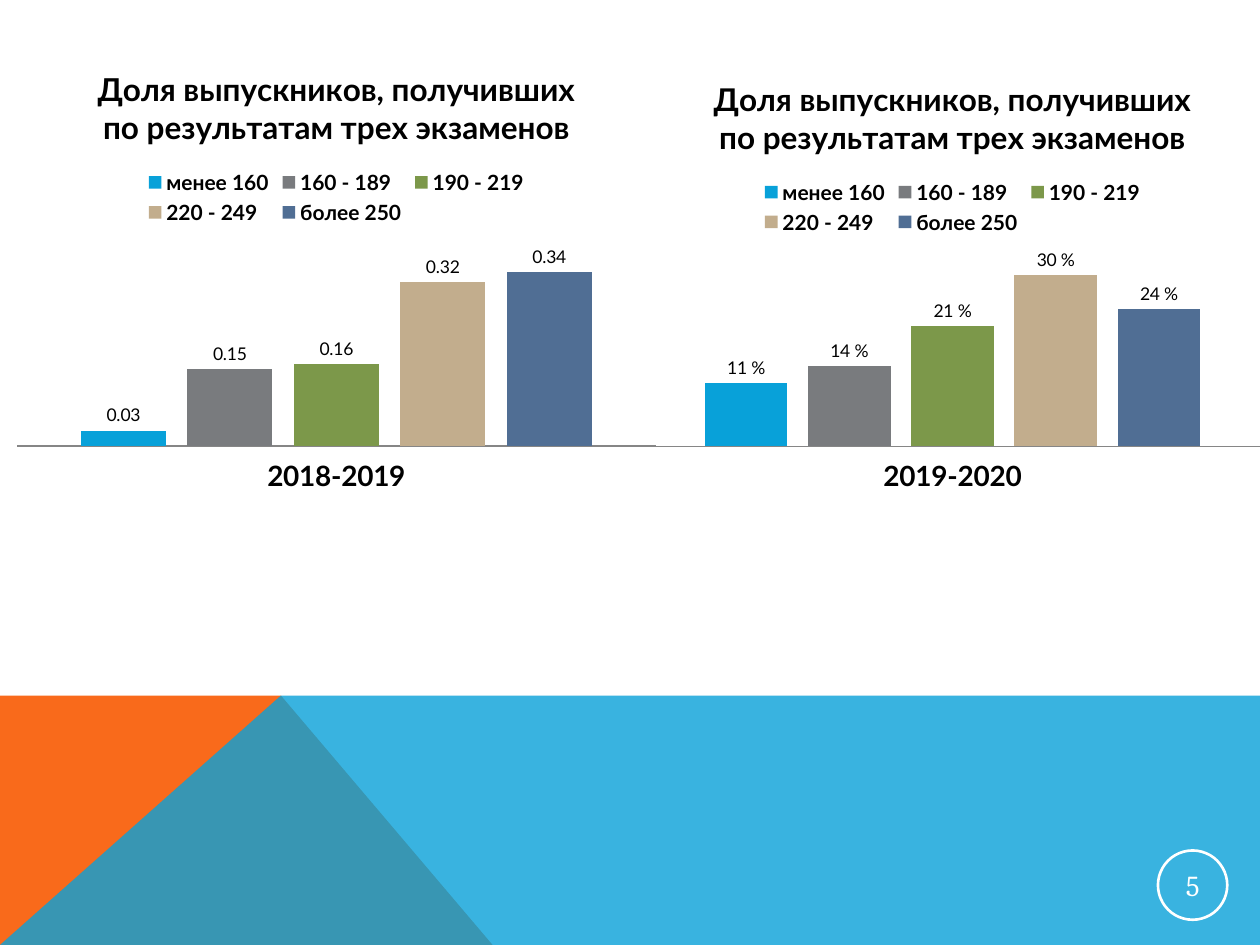
from lxml import etree
from pptx import Presentation
from pptx.chart.data import CategoryChartData
from pptx.dml.color import RGBColor
from pptx.enum.chart import XL_CHART_TYPE as ChartType
from pptx.enum.chart import XL_LABEL_POSITION as LabelPosition
from pptx.enum.chart import XL_LEGEND_POSITION as LegendPosition
from pptx.enum.chart import XL_TICK_LABEL_POSITION as TickLabels
from pptx.enum.chart import XL_TICK_MARK as TickMark
from pptx.enum.shapes import MSO_SHAPE as Preset
from pptx.enum.text import MSO_ANCHOR as Anchor
from pptx.enum.text import PP_ALIGN as Align
from pptx.oxml.ns import qn
from pptx.util import Inches, Pt

BLACK = RGBColor(0x00, 0x00, 0x00)
WHITE = RGBColor(0xFF, 0xFF, 0xFF)
GRAY = RGBColor(0x86, 0x86, 0x86)
ORANGE = RGBColor(0xF9, 0x6A, 0x1B)
BLUE = RGBColor(0x08, 0xA1, 0xD9)

SCORE_BANDS = {
    "менее 160": BLUE,
    "160 - 189": RGBColor(0x79, 0x7B, 0x7E),
    "190 - 219": RGBColor(0x7C, 0x98, 0x4A),
    "220 - 249": RGBColor(0xC2, 0xAD, 0x8D),
    "более 250": RGBColor(0x50, 0x6E, 0x94),
}
CHART_TITLE = "Доля выпускников, получивших по результатам трех экзаменов"
CHARTS = [
    dict(year="2019-2020", values=[11, 14, 21, 30, 24], maximum=35,
         number_format='0" %"', frame=(5, 0.44, 5.12, 3.46)),
    dict(year="2018-2019", values=[0.03, 0.15, 0.16, 0.32, 0.34], maximum=0.4,
         number_format="0.00", frame=(0.03, 0.36, 5.28, 3.54)),
]
PLOT_LAYOUT = dict(layoutTarget="inner", xMode="edge", yMode="edge",
                   x=0.02, y=0.44, w=0.96, h=0.46)


def set_format(target, **values):
    for name, value in values.items():
        setattr(target, name, value)


def set_font(font, size, color=BLACK, bold=False, name="Lato"):
    set_format(font, size=Pt(size), bold=bold, name=name)
    font.color.rgb = color


def add_polygon(page, points, color, opacity=100):
    corners = [(Inches(x), Inches(y)) for x, y in points]
    builder = page.shapes.build_freeform(*corners[0])
    builder.add_line_segments(corners[1:], close=True)
    polygon = builder.convert_to_shape()
    polygon.shadow.inherit = False
    polygon.fill.solid()
    polygon.fill.fore_color.rgb = color
    polygon.line.fill.background()
    if opacity < 100:
        fill_color = polygon.fill._xPr.find(qn("a:solidFill"))[0]
        etree.SubElement(fill_color, qn("a:alpha"), val=str(opacity * 1000))


def add_page_number(page, number):
    circle = page.shapes.add_shape(
        Preset.OVAL, Inches(9.19), Inches(6.75), Inches(0.55), Inches(0.55))
    circle.shadow.inherit = False
    circle.fill.background()
    circle.line.color.rgb = WHITE
    circle.line.width = Pt(1.5)
    set_format(circle.text_frame, vertical_anchor=Anchor.MIDDLE, word_wrap=False,
               margin_left=0, margin_right=0, margin_top=0, margin_bottom=0)
    para = circle.text_frame.paragraphs[0]
    para.alignment = Align.CENTER
    span = para.add_run()
    span.text = number
    set_font(span.font, 16.5, WHITE, name="Cambria")


def set_plot_layout(chart):
    """Fix the inner plot area as fractions of the chart frame."""
    plot_area = chart._chartSpace.find(".//" + qn("c:plotArea"))
    layout = plot_area.find(qn("c:layout"))
    if layout is None:
        layout = etree.Element(qn("c:layout"))
        plot_area.insert(0, layout)
    manual = etree.SubElement(layout, qn("c:manualLayout"))
    for name, value in PLOT_LAYOUT.items():
        etree.SubElement(manual, qn("c:" + name), val=str(value))


def format_axes(chart, maximum):
    category_axis, value_axis = chart.category_axis, chart.value_axis
    set_format(category_axis, major_tick_mark=TickMark.NONE,
               minor_tick_mark=TickMark.NONE, tick_label_position=TickLabels.LOW)
    category_axis.format.line.color.rgb = GRAY
    set_font(category_axis.tick_labels.font, 16, bold=True)
    set_format(value_axis, visible=False, has_major_gridlines=False,
               minimum_scale=0, maximum_scale=maximum)


def add_score_chart(page, year, values, maximum, number_format, frame):
    data = CategoryChartData(number_format=number_format)
    data.categories = [year]
    for band, value in zip(SCORE_BANDS, values):
        data.add_series(band, [value])
    chart = page.shapes.add_chart(
        ChartType.COLUMN_CLUSTERED, *map(Inches, frame), data).chart
    set_font(chart.font, 10)

    chart.has_title = True
    title = chart.chart_title
    title.include_in_layout = False
    title.text_frame.text = CHART_TITLE
    set_font(title.text_frame.paragraphs[0].runs[0].font, 18, bold=True)

    chart.has_legend = True
    set_format(chart.legend, position=LegendPosition.TOP, include_in_layout=False)
    set_font(chart.legend.font, 12, bold=True)

    plot = chart.plots[0]
    set_format(plot, gap_width=150, overlap=-25, vary_by_categories=False,
               has_data_labels=True)
    set_format(plot.data_labels, show_value=True, number_format=number_format,
               number_format_is_linked=False, position=LabelPosition.OUTSIDE_END)
    set_font(plot.data_labels.font, 10)
    for series, color in zip(plot.series, SCORE_BANDS.values()):
        series.format.fill.solid()
        series.format.fill.fore_color.rgb = color

    format_axes(chart, maximum)
    set_plot_layout(chart)


def main():
    deck = Presentation()
    set_format(deck, slide_width=Inches(10), slide_height=Inches(7.5))
    page = deck.slides.add_slide(deck.slide_layouts[6])
    add_polygon(page, [(0, 7.5), (0, 5.52), (2.23, 5.52), (3.91, 7.5)], ORANGE)
    add_polygon(page, [(0, 7.5), (2.23, 5.52), (10, 5.52), (10, 7.5)], BLUE, opacity=80)
    add_page_number(page, "5")
    for chart in CHARTS:
        add_score_chart(page, **chart)
    deck.save("out.pptx")


if __name__ == "__main__":
    main()
